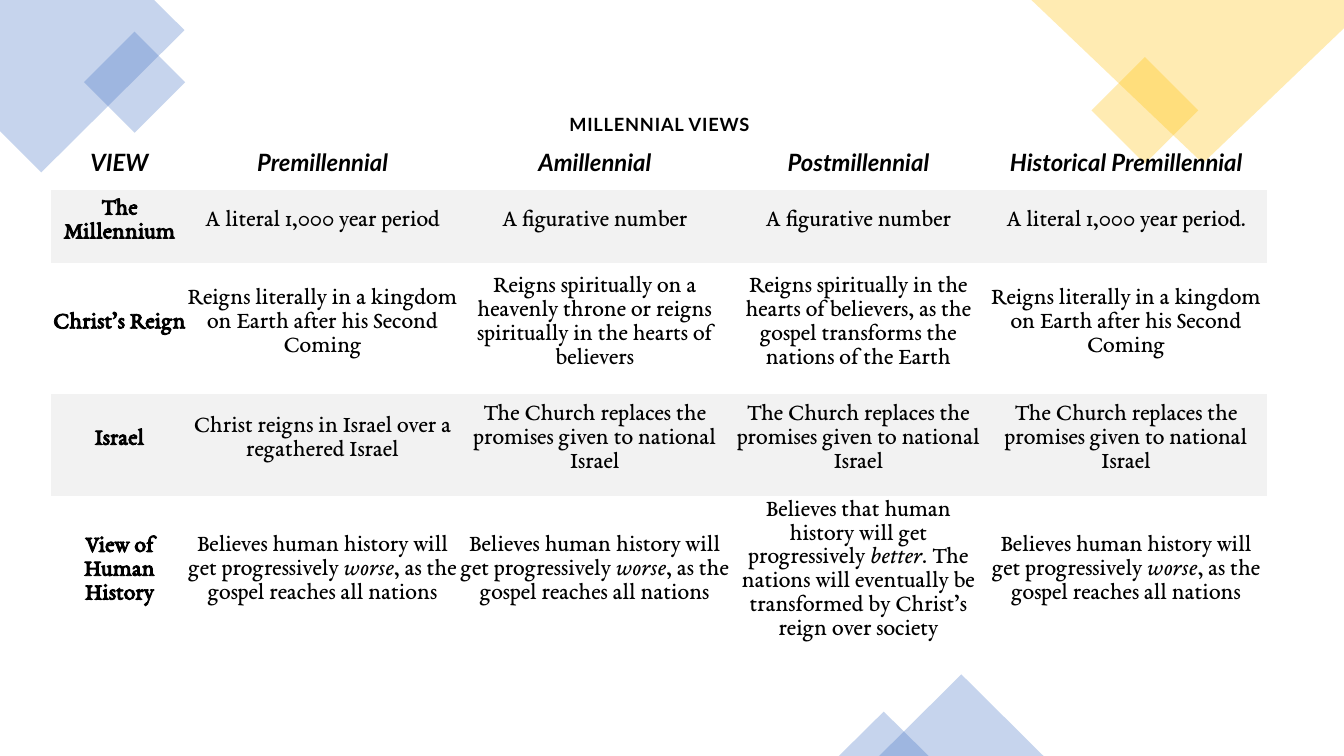
from lxml.etree import SubElement
from pptx import Presentation
from pptx.dml.color import RGBColor
from pptx.enum.shapes import MSO_SHAPE
from pptx.enum.text import MSO_ANCHOR, PP_ALIGN
from pptx.oxml.ns import qn
from pptx.util import Inches, Pt

BLUE, GOLD = "4472C4", "FFC000"
COLS = [1.35, 2.68, 2.72, 2.51, 2.8]
ROWS = [0.47, 0.44, 0.72, 1.3, 1.01, 1.59]
REIGN = "Reigns literally in a kingdom on Earth after his Second Coming"
CHURCH = "The Church replaces the promises given to national Israel"
WORSE = ("Believes human history will get progressively ", "worse",
         ", as the gospel reaches all nations")
BETTER = ("Believes that human history will get progressively ", "better",
          ". The nations will eventually be transformed by Christ’s reign over society")
VIEWS = [
    ["VIEW", "Premillennial", "Amillennial", "Postmillennial", "Historical Premillennial"],
    ["The Millennium", "A literal 1,000 year period", "A figurative number",
     "A figurative number", "A literal 1,000 year period."],
    ["Christ’s Reign", REIGN,
     "Reigns spiritually on a heavenly throne or reigns spiritually in the hearts of believers",
     "Reigns spiritually in the hearts of believers, as the gospel transforms the nations of the Earth",
     REIGN],
    ["Israel", "Christ reigns in Israel over a regathered Israel", CHURCH, CHURCH, CHURCH],
    ["View of Human History", WORSE, WORSE, BETTER, WORSE],
]


def rgb(color):
    return RGBColor.from_string(color)


def paint(sp, color, alpha=None):
    sp.shadow.inherit = False
    sp.fill.solid()
    sp.fill.fore_color.rgb = rgb(color)
    sp.line.fill.background()
    if alpha:
        clr = sp._element.spPr.find(qn("a:solidFill"))[0]
        SubElement(clr, qn("a:alpha"), val=str(alpha * 1000))


def add_preset(s, kind, box, color, alpha=None, rotation=0):
    sp = s.shapes.add_shape(kind, *map(Inches, box))
    sp.rotation = rotation
    paint(sp, color, alpha)


def add_outline(s, points, color):
    start, *rest = [(Inches(x), Inches(y)) for x, y in points]
    fb = s.shapes.build_freeform(*start)
    fb.add_line_segments(rest, close=True)
    paint(fb.convert_to_shape(), color, 30)


def add_decor(s, width, height):
    add_preset(s, MSO_SHAPE.RECTANGLE, (0, 0, width, height), "FFFFFF")
    add_outline(s, [(1.53, 0), (0, 0), (0, 1.3), (0.41, 1.71), (1.83, 0.3)], BLUE)
    add_preset(s, MSO_SHAPE.RECTANGLE, (0.98, 0.46, 0.71, 0.71), BLUE, 30, 315)
    add_preset(s, MSO_SHAPE.RECTANGLE, (width - 2.35, 0.72, 0.75, 0.75), GOLD, 30, 315)
    add_outline(s, [(width, 0), (width - 3.1, 0), (width - 1.4, 1.62), (width, 0.28)], GOLD)
    for left, w, h in [(8.72, 1.63, 0.81), (8.32, 0.89, 0.44)]:
        add_preset(s, MSO_SHAPE.ISOSCELES_TRIANGLE, (left, height - h, w, h), BLUE, 30)


def fill_cell(cell, parts, font, size, bold=False, italic=False):
    cell.margin_left = cell.margin_right = cell.margin_top = 0
    cell.margin_bottom = Inches(0.11)
    cell.vertical_anchor = MSO_ANCHOR.MIDDLE
    p = cell.text_frame.paragraphs[0]
    p.alignment = PP_ALIGN.CENTER
    for i, text in enumerate([parts] if isinstance(parts, str) else parts):
        r = p.add_run()
        r.text = text
        r.font.name = font
        r.font.size = Pt(size)
        r.font.bold = bold
        r.font.italic = italic or i == 1
        r.font.color.rgb = rgb("000000")


def add_views_table(s, left, top):
    box = map(Inches, (left, top, sum(COLS), sum(ROWS)))
    tbl = s.shapes.add_table(len(ROWS), len(COLS), *box).table
    tbl.first_row = tbl.horz_banding = False
    tbl._tbl.tblPr.find(qn("a:tableStyleId")).text = "{2D5ABB26-0587-4C30-8999-92F81FD0307C}"
    for col, width in zip(tbl.columns, COLS):
        col.width = Inches(width)
    for row, height in zip(tbl.rows, ROWS):
        row.height = Inches(height)

    heading = tbl.cell(0, 0)
    heading.merge(tbl.cell(0, len(COLS) - 1))
    fill_cell(heading, "MILLENNIAL VIEWS", "Lato", 13, bold=True)
    heading.margin_top = Inches(0.11)
    heading.vertical_anchor = MSO_ANCHOR.BOTTOM
    heading.text_frame.paragraphs[0].runs[0].font._element.set("spc", "60")
    heading.fill.background()

    for i, view in enumerate(VIEWS, 1):
        header = i == 1
        for j, parts in enumerate(view):
            cell = tbl.cell(i, j)
            font = "Lato" if header else "EB Garamond"
            fill_cell(cell, parts, font, 17, bold=header or j == 0, italic=header)
            if i in (2, 4):
                cell.fill.solid()
                cell.fill.fore_color.rgb = rgb("F2F2F2")
            else:
                cell.fill.background()


def main():
    prs = Presentation()
    prs.slide_width, prs.slide_height = Inches(13.33), Inches(7.5)
    s = prs.slides.add_slide(prs.slide_layouts[6])
    add_decor(s, 13.33, 7.5)
    add_views_table(s, 0.51, 0.98)
    prs.save("out.pptx")


if __name__ == "__main__":
    main()
